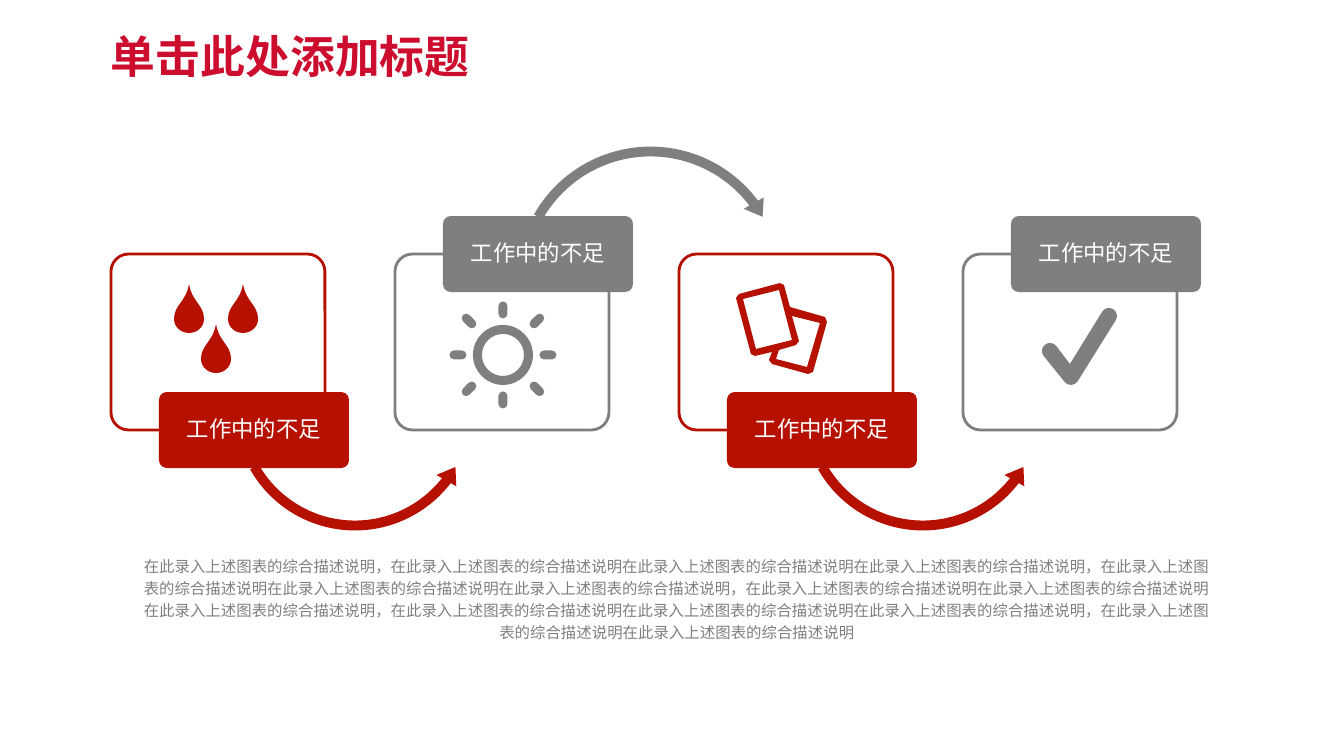
"""Build a slide of four linked cards with icons and a summary."""
import math

import lxml.etree
import pptx
import pptx.dml.color
import pptx.enum.shapes
import pptx.enum.text
import pptx.oxml.ns
import pptx.util

PX = 12192000 / 1344
STEP = 284
COLORS = {"red": "B61000", "gray": "7F7F7F", "title": "CC0D2E", "white": "FFFFFF"}
KIND = pptx.enum.shapes.MSO_SHAPE
ALIGN = pptx.enum.text.PP_ALIGN
ANCHOR = pptx.enum.text.MSO_ANCHOR
LABEL = "工作中的不足"
PHRASE = "在此录入上述图表的综合描述说明"
SUMMARY = "，".join([PHRASE] + [PHRASE * 3] * 4 + [PHRASE * 2])
SHEETS = [
    [(825, 317), (790, 307), (784, 285), (780, 283), (739, 294), (736, 298),
     (751, 354), (755, 356), (772, 352), (769, 360), (772, 364), (808, 374),
     (813, 372), (827, 322)],
    [(743, 299), (779, 290), (792, 340), (756, 349)],
    [(807, 367), (776, 359), (779, 350), (796, 345), (799, 341), (792, 316),
     (820, 323)],
]


def emu(px):
    return pptx.util.Emu(round(px * PX))


def tint(name):
    return pptx.dml.color.RGBColor.from_string(COLORS[name])


def paint(shape, fill=None, line=None):
    shape.shadow.inherit = False
    if fill:
        shape.fill.solid()
        shape.fill.fore_color.rgb = tint(fill)
    else:
        shape.fill.background()
    if line:
        shape.line.color.rgb = tint(line)
        shape.line.width = pptx.util.Pt(2)
    else:
        shape.line.fill.background()


def add_box(group, kind, box, adjust, **style):
    shape = group.shapes.add_shape(kind, *map(emu, box))
    for i, value in enumerate(adjust):
        shape.adjustments[i] = value
    paint(shape, **style)
    return shape


def write(shape, text, size, color, font="Calibri", east="Calibri", bold=False,
          align=ALIGN.CENTER, anchor=ANCHOR.MIDDLE, space=0.9, pad=(10, 5)):
    frame = shape.text_frame
    frame.word_wrap = True
    frame.vertical_anchor = anchor
    frame.margin_left = frame.margin_right = emu(pad[0])
    frame.margin_top = frame.margin_bottom = emu(pad[1])
    para = frame.paragraphs[0]
    para.alignment = align
    para.line_spacing = space
    run = para.add_run()
    run.text = text
    run.font.size = pptx.util.Pt(size)
    run.font.bold = bold
    run.font.color.rgb = tint(color)
    run.font.name = font
    props = run.font._element
    props.set("lang", "zh-CN")
    lxml.etree.SubElement(props, pptx.oxml.ns.qn("a:ea"), typeface=east)


def bend(shape):
    lines = list(shape._element.iter(pptx.oxml.ns.qn("a:lnTo")))
    for first, second, third in zip(lines[::3], lines[1::3], lines[2::3]):
        first.tag = pptx.oxml.ns.qn("a:cubicBezTo")
        for line in (second, third):
            first.append(line[0])
            line.getparent().remove(line)


def draw(slide, loops, fill, curved=True):
    loops = [[(emu(x), emu(y)) for x, y in loop] for loop in loops]
    pen = slide.shapes.build_freeform(*loops[0][0], scale=1.0)
    for i, loop in enumerate(loops):
        if i:
            pen.move_to(*loop[0])
        pen.add_line_segments(loop[1:], close=True)
    shape = pen.convert_to_shape()
    if curved:
        bend(shape)
    paint(shape, fill=fill)


def arc(x, y, radius, start, end):
    count = math.ceil((end - start) / 90)
    step = math.radians(end - start) / count
    pull = 4 / 3 * math.tan(step / 4)

    def spot(turn, side):
        return (x + radius * (math.cos(turn) - side * math.sin(turn)),
                y + radius * (math.sin(turn) + side * math.cos(turn)))

    points = [spot(math.radians(start), 0)]
    for i in range(count):
        turn = math.radians(start) + i * step
        points += [spot(turn, pull), spot(turn + step, -pull), spot(turn + step, 0)]
    return points


def chain(first, *others):
    loop = list(first)
    for part in others:
        loop += [part[0]] * 3 + part[1:]
    return loop


def drop(x, y):
    half = [(0, 0), (-3, 18), (-15, 21), (-15, 35), (-15, 43), (-8, 49), (0, 49)]
    whole = half + [(-dx, dy) for dx, dy in half[-2::-1]]
    return [(x + dx, y + dy) for dx, dy in whole]


def ray(x, y, turn, reach):
    near, far = [(x + r * math.cos(math.radians(turn)),
                  y + r * math.sin(math.radians(turn)))
                 for r in (reach - 4, reach + 4)]
    return chain(arc(*far, 4.5, turn - 90, turn + 90),
                 arc(*near, 4.5, turn + 90, turn + 270))


def sun(x, y):
    rays = [ray(x, y, 45 * i, 45 + 3 * (i % 2)) for i in range(8)]
    return [arc(x, y, 30, 0, 360), arc(x, y, 21, 0, 360)] + rays


def tick():
    return chain(arc(1050, 351, 8, 142, 322), [(1070, 364)],
                 arc(1109, 316, 8, 212, 392), arc(1071, 377, 8, 32, 142))


def add_card(group, i):
    color = ("red", "gray")[i % 2]
    shift = STEP * i
    add_box(group, KIND.ROUNDED_RECTANGLE, (111 + shift, 254, 214, 176), [0.1],
            line=color)
    if color == "red":
        add_box(group, KIND.LEFT_CIRCULAR_ARROW, (228 + shift, 283, 254, 254),
                [0.039, 4.867, 22.622, 90.245, 0.045], fill=color)
    elif i == 1:
        add_box(group, KIND.CIRCULAR_ARROW, (510, 140, 281, 281),
                [0.035, 4.356, 193.889, 125.755, 0.041], fill=color)
    top = 392 if color == "red" else 216
    label = add_box(group, KIND.ROUNDED_RECTANGLE, (159 + shift, top, 190, 76),
                    [0.1], fill=color)
    write(label, LABEL, 16, "white", pad=(4, 3))


def main():
    deck = pptx.Presentation()
    deck.slide_width, deck.slide_height = emu(1344), emu(756)
    slide = deck.slides.add_slide(deck.slide_layouts[5])
    title = slide.shapes.title
    title.left, title.top, title.width, title.height = map(emu, (101, 28, 1159, 62))
    write(title, "单击此处添加标题", 32, "title", font="Montserrat",
          east="Montserrat", bold=True, align=ALIGN.LEFT)
    draw(slide, [drop(189, 284), drop(243, 284), drop(216, 324)], "red")
    draw(slide, sun(503, 355), "gray")
    group = slide.shapes.add_group_shape()
    for i in range(4):
        add_card(group, i)
    draw(slide, SHEETS, "red", curved=False)
    draw(slide, [tick()], "gray")
    note = slide.shapes.add_textbox(*map(emu, (125, 546, 1104, 126)))
    write(note, SUMMARY, 11, "gray", font="Noto Sans CJK SC",
          anchor=ANCHOR.TOP, space=1.2, pad=(13, 7))
    deck.save("out.pptx")


if __name__ == "__main__":
    main()
